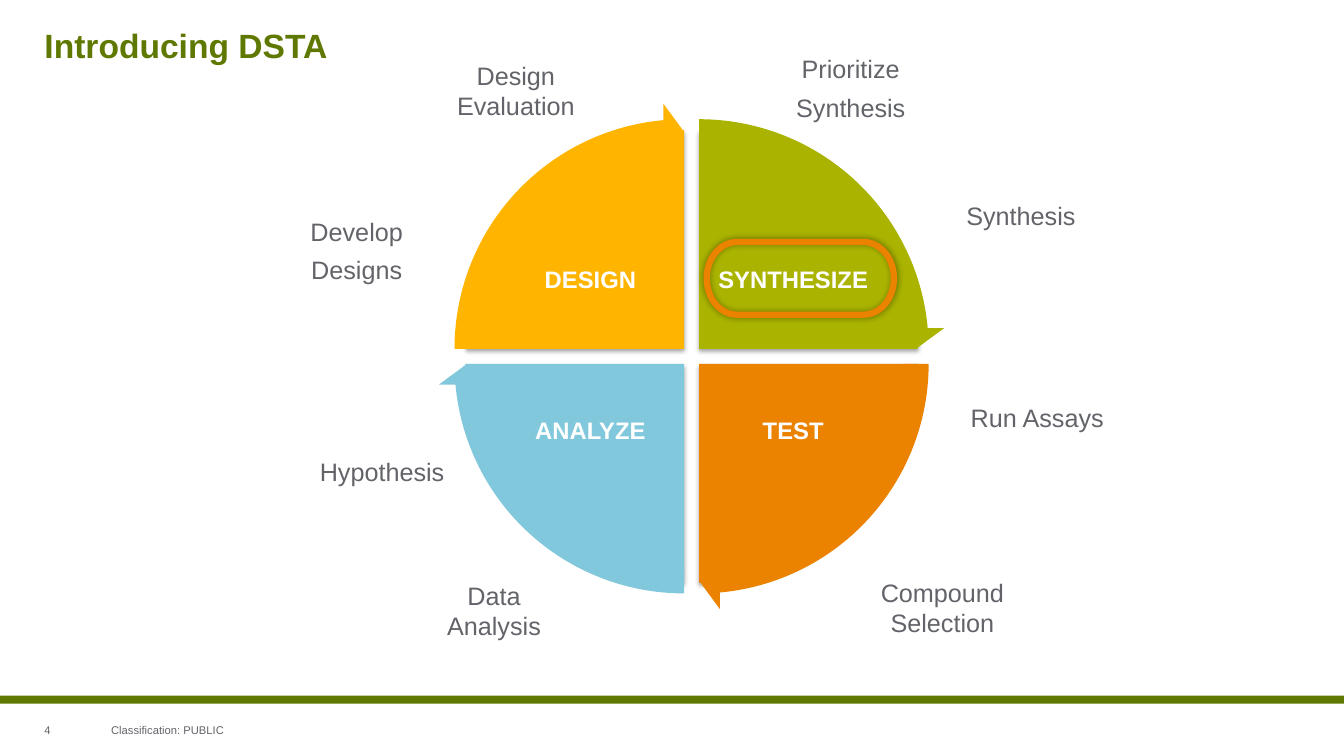
from dataclasses import dataclass

from lxml import etree
from pptx import Presentation
from pptx.dml.color import RGBColor
from pptx.enum import shapes, text
from pptx.oxml.ns import qn
from pptx.util import Cm, Pt

TITLE = "Introducing DSTA"
FOOTER = "Classification: PUBLIC"
PAGE = "4"
# name, fill, start angle, column, row
PHASES = [
    ("SYNTHESIZE", "AAB400", 162, 1, 0),
    ("TEST", "EB8200", 0, 1, 1),
    ("ANALYZE", "82C8DC", 54, 0, 1),
    ("DESIGN", "FFB400", 108, 0, 0),
]
# paragraphs, left, top
STEPS = [
    (["Data\nAnalysis"], 10.52, 14.63),
    (["Hypothesis"], 7.7, 11.51),
    (["Develop", "Designs"], 7.06, 5.44),
    (["Design Evaluation"], 11.07, 1.52),
    (["Prioritize", "Synthesis"], 19.51, 1.35),
    (["Run Assays"], 24.21, 10.13),
    (["Synthesis"], 23.8, 5.05),
    (["Compound Selection"], 21.82, 14.55),
]


@dataclass(frozen=True)
class Theme:
    font: str = "Arial"
    green: str = "5F7800"
    grey: str = "626469"
    white: str = "FFFFFF"
    orange: str = "EB8200"
    title: int = 24
    step: int = 18
    phase: int = 17
    footer: int = 8


THEME = Theme()
SLIDE_W, SLIDE_H = 33.87, 19.05
QUARTER = 54  # 90 degrees in adjustment units
HEAD = 3.275  # arrowhead angle in the same units
PIE, ARROW = 11.02, 12.4
PIE_LEFT, PIE_TOP, GAP = 11.73, 3.28, 0.38
LABEL_LEFT, LABEL_TOP = (12.85, 17.96), (5.56, 9.37)


def box(left, top, width, height):
    return Cm(left), Cm(top), Cm(width), Cm(height)


def write(frame, paragraphs, size, color, bold=False, align=text.PP_ALIGN.LEFT,
          anchor=text.MSO_ANCHOR.TOP, inset=0, line=1.0, after=6):
    frame.word_wrap = True
    frame.auto_size = text.MSO_AUTO_SIZE.NONE
    frame.vertical_anchor = anchor
    frame.margin_left = frame.margin_right = Cm(inset)
    frame.margin_top = frame.margin_bottom = Cm(inset)
    for index, words in enumerate(paragraphs):
        paragraph = frame.paragraphs[0] if index == 0 else frame.add_paragraph()
        paragraph.text = words
        paragraph.alignment = align
        paragraph.line_spacing = line
        paragraph.space_before, paragraph.space_after = Pt(0), Pt(after)
        for run in paragraph.runs:
            run.font.name, run.font.size, run.font.bold = THEME.font, Pt(size), bold
            run.font.color.rgb = RGBColor.from_string(color)


def add_filled(parent, kind, place, color, adjustments=()):
    shape = parent.add_shape(kind, *place)
    shape.shadow.inherit = False
    shape.fill.solid()
    shape.fill.fore_color.rgb = RGBColor.from_string(color)
    shape.line.fill.background()
    for index, value in enumerate(adjustments):
        shape.adjustments[index] = value
    return shape


def add_shadow(shape, opacity, blur, distance, degrees):
    effects = shape._element.spPr.find(qn("a:effectLst"))
    outer = etree.SubElement(
        effects, qn("a:outerShdw"), blurRad=str(Pt(blur)), dist=str(Pt(distance)),
        dir=str(degrees * 60000), rotWithShape="0")
    black = etree.SubElement(outer, qn("a:srgbClr"), val="000000")
    etree.SubElement(black, qn("a:alpha"), val=str(opacity * 1000))


def add_cycle(slide):
    cycle = slide.shapes.add_group_shape().shapes
    for name, color, start, column, row in PHASES:
        place = box(PIE_LEFT + column * GAP, PIE_TOP + row * GAP, PIE, PIE)
        end = (start + QUARTER) % (4 * QUARTER)
        wedge = add_filled(cycle, shapes.MSO_SHAPE.PIE, place, color, (start, end))
        add_shadow(wedge, 35, 3.1, 1.8, 90)
        label = cycle.add_textbox(*box(LABEL_LEFT[column], LABEL_TOP[row], 4.06, 3.02))
        write(label.text_frame, [name], THEME.phase, THEME.white, True,
              text.PP_ALIGN.CENTER, text.MSO_ANCHOR.MIDDLE, 0.05, 0.9, after=0)
    margin = (ARROW - PIE) / 2
    for _, color, start, column, row in PHASES:
        place = box(PIE_LEFT + column * GAP - margin, PIE_TOP + row * GAP - margin,
                    ARROW, ARROW)
        add_filled(cycle, shapes.MSO_SHAPE.CIRCULAR_ARROW, place, color,
                   (0.051, HEAD, start + QUARTER - HEAD, start, 0.059))


def main():
    deck = Presentation()
    deck.slide_width, deck.slide_height = Cm(SLIDE_W), Cm(SLIDE_H)
    slide = deck.slides.add_slide(deck.slide_layouts[5])

    add_filled(slide.shapes, shapes.MSO_SHAPE.RECTANGLE,
               box(0, 17.53, SLIDE_W, 0.2), THEME.green)
    for words, left, width in ((FOOTER, 2.8, 21.34), (PAGE, 1.12, 1.68)):
        note = slide.shapes.add_textbox(*box(left, 17.73, width, 1.32))
        write(note.text_frame, [words], THEME.footer, THEME.grey,
              anchor=text.MSO_ANCHOR.MIDDLE)

    title = slide.shapes.title
    title.left, title.top, title.width, title.height = box(1.12, 0.74, 31.6, 2.01)
    write(title.text_frame, [TITLE], THEME.title, THEME.green, True, line=0.9)

    add_cycle(slide)
    for paragraphs, left, top in STEPS:
        step = slide.shapes.add_textbox(*box(left, top, 3.86, 1.32))
        write(step.text_frame, paragraphs, THEME.step, THEME.grey,
              align=text.PP_ALIGN.CENTER)

    focus = slide.shapes.add_shape(shapes.MSO_SHAPE.FLOWCHART_TERMINATOR,
                                   *box(17.81, 6.1, 4.72, 1.83))
    focus.shadow.inherit = False
    focus.fill.background()
    focus.line.color.rgb = RGBColor.from_string(THEME.orange)
    focus.line.width = Pt(4.5)
    add_shadow(focus, 40, 5, 0, 0)
    deck.save("out.pptx")


if __name__ == "__main__":
    main()
